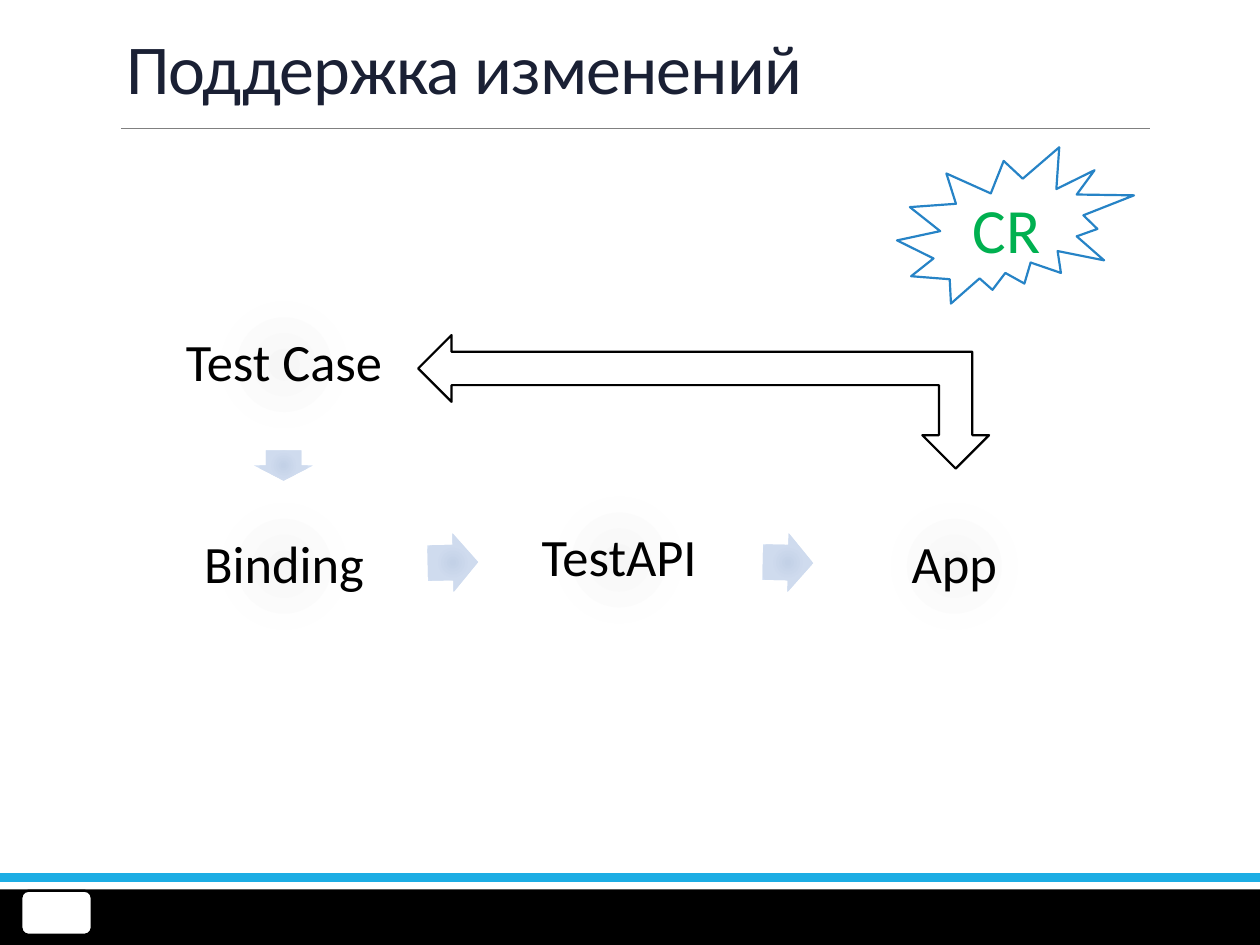
from typing import NamedTuple

from pptx import Presentation
from pptx.dml.color import RGBColor
from pptx.enum.shapes import MSO_CONNECTOR, MSO_SHAPE
from pptx.enum.text import MSO_ANCHOR, PP_ALIGN
from pptx.oxml import parse_xml
from pptx.oxml.ns import nsdecls, qn
from pptx.util import Pt

RECTANGLE = MSO_SHAPE.RECTANGLE
ROUNDED = MSO_SHAPE.ROUNDED_RECTANGLE
RIGHT_ARROW = MSO_SHAPE.RIGHT_ARROW
BURST = MSO_SHAPE.EXPLOSION2
CORNER_ARROW = MSO_SHAPE.LEFT_UP_ARROW
CENTER, LEFT = PP_ALIGN.CENTER, PP_ALIGN.LEFT
MIDDLE, BOTTOM = MSO_ANCHOR.MIDDLE, MSO_ANCHOR.BOTTOM

FONT = "Calibri"
CARD_GRADIENT = ((0, "F6F6F6"), (45, "FEFEFE"), (100, "FFFFFF"))
ARROW_GRADIENT = ((0, "C3D1E7"), (45, "CFDBEE"), (100, "D2DFF3"))

FIRST_LEFT, COLUMN_PITCH = 93.6, 191.5
CARD_WIDTH, CARD_HEIGHT = 137.5, 82.8


class Box(NamedTuple):
    left: float
    top: float
    width: float
    height: float


class Step(NamedTuple):
    label: str
    column: int
    top: float


class FlowArrow(NamedTuple):
    box: Box
    rotation: float


def column_left(column: int) -> float:
    return FIRST_LEFT + column * COLUMN_PITCH


STEPS = (
    Step("Test Case", 0, 167),
    Step("Binding", 0, 282.2),
    Step("TestAPI", 1, 278.6),
    Step("App", 2, 282.2),
)
FLOW_ARROWS = (
    FlowArrow(Box(153.4, 249.1, 17.3, 33.8), 90),
    FlowArrow(Box(column_left(0) + 150.8, 304.6, 28.8, 33.8), 358.8),
    FlowArrow(Box(column_left(1) + 150.8, 304.6, 28.8, 33.8), 1.2),
)


def color(value: str) -> RGBColor:
    return RGBColor.from_string(value)


def place(shape, box: Box) -> None:
    shape.left, shape.top, shape.width, shape.height = map(Pt, box)


def add_shape(slide, kind, box: Box, fill: str = "", line: str = ""):
    shape = slide.shapes.add_shape(kind, *map(Pt, box))
    shape.shadow.inherit = False
    if fill:
        shape.fill.solid()
        shape.fill.fore_color.rgb = color(fill)
    if line:
        shape.line.color.rgb = color(line)
        shape.line.width = Pt(1.25)
    else:
        shape.line.fill.background()
    return shape


def fill_radial(shape, stops) -> None:
    """Fill the shape with a gradient that spreads from its centre."""
    shape.fill.gradient()
    properties = shape.element.spPr
    stop_xml = "".join(
        f'<a:gs pos="{position * 1000}"><a:srgbClr val="{value}"/></a:gs>'
        for position, value in stops
    )
    gradient = parse_xml(
        f'<a:gradFill {nsdecls("a")} rotWithShape="1"><a:gsLst>{stop_xml}</a:gsLst>'
        '<a:path path="circle"><a:fillToRect l="100000" t="100000" '
        'r="100000" b="100000"/></a:path></a:gradFill>'
    )
    properties.replace(properties.find(qn("a:gradFill")), gradient)


def write(shape, text: str, size: float, text_color: str,
          alignment=CENTER, anchor=MIDDLE, line_spacing: float = 1.0):
    frame = shape.text_frame
    frame.word_wrap = True
    frame.vertical_anchor = anchor
    paragraph = frame.paragraphs[0]
    paragraph.text = text
    paragraph.alignment = alignment
    paragraph.line_spacing = line_spacing
    paragraph.font.name = FONT
    paragraph.font.size = Pt(size)
    paragraph.font.color.rgb = color(text_color)
    return paragraph


def add_frame(slide) -> None:
    """Draw the footer bars, the page badge and the rule below the title."""
    add_shape(slide, RECTANGLE, Box(0, 508.3, 720, 31.7), "000000")
    add_shape(slide, RECTANGLE, Box(0, 499, 720, 5), "1CADE4")
    add_shape(slide, ROUNDED, Box(12.2, 509, 40.3, 25.2), "FFFFFF", "000000")
    rule = slide.shapes.add_connector(
        MSO_CONNECTOR.STRAIGHT, Pt(69.1), Pt(73.4), Pt(657.4), Pt(73.4))
    rule.line.color.rgb = color("808080")
    rule.line.width = Pt(0.5)
    rule.element.spPr.append(parse_xml(f'<a:effectLst {nsdecls("a")}/>'))


def add_title(slide, text: str) -> None:
    title = slide.shapes.title
    place(title, Box(64.8, 22.3, 594, 43.2))
    paragraph = write(title, text, 40, "1A2034", LEFT, BOTTOM, 0.85)
    paragraph.runs[0].font._element.set("spc", "-50")


def add_step(slide, step: Step) -> None:
    box = Box(column_left(step.column), step.top, CARD_WIDTH, CARD_HEIGHT)
    card = add_shape(slide, ROUNDED, box)
    card.adjustments[0] = 0.1
    fill_radial(card, CARD_GRADIENT)
    write(card, step.label, 30, "000000", line_spacing=0.9)


def add_flow_arrow(slide, flow_arrow: FlowArrow) -> None:
    arrow = add_shape(slide, RIGHT_ARROW, flow_arrow.box)
    arrow.adjustments[0] = 0.6
    arrow.rotation = flow_arrow.rotation
    fill_radial(arrow, ARROW_GRADIENT)


def main() -> None:
    presentation = Presentation()
    presentation.slide_width, presentation.slide_height = Pt(720), Pt(540)
    slide = presentation.slides.add_slide(presentation.slide_layouts[5])

    add_frame(slide)
    add_title(slide, "Поддержка изменений")
    for step in STEPS:
        add_step(slide, step)
    for flow_arrow in FLOW_ARROWS:
        add_flow_arrow(slide, flow_arrow)

    change_request = add_shape(
        slide, BURST, Box(512.6, 84.2, 135.4, 89.3), "FFFFFF", "2683C6")
    write(change_request, "CR", 36, "00B050")
    feedback = add_shape(
        slide, CORNER_ARROW, Box(239, 191.5, 326.2, 76.3), "FFFFFF", "000000")
    feedback.element.spPr.find(qn("a:xfrm")).set("flipV", "1")

    presentation.save("out.pptx")


if __name__ == "__main__":
    main()
